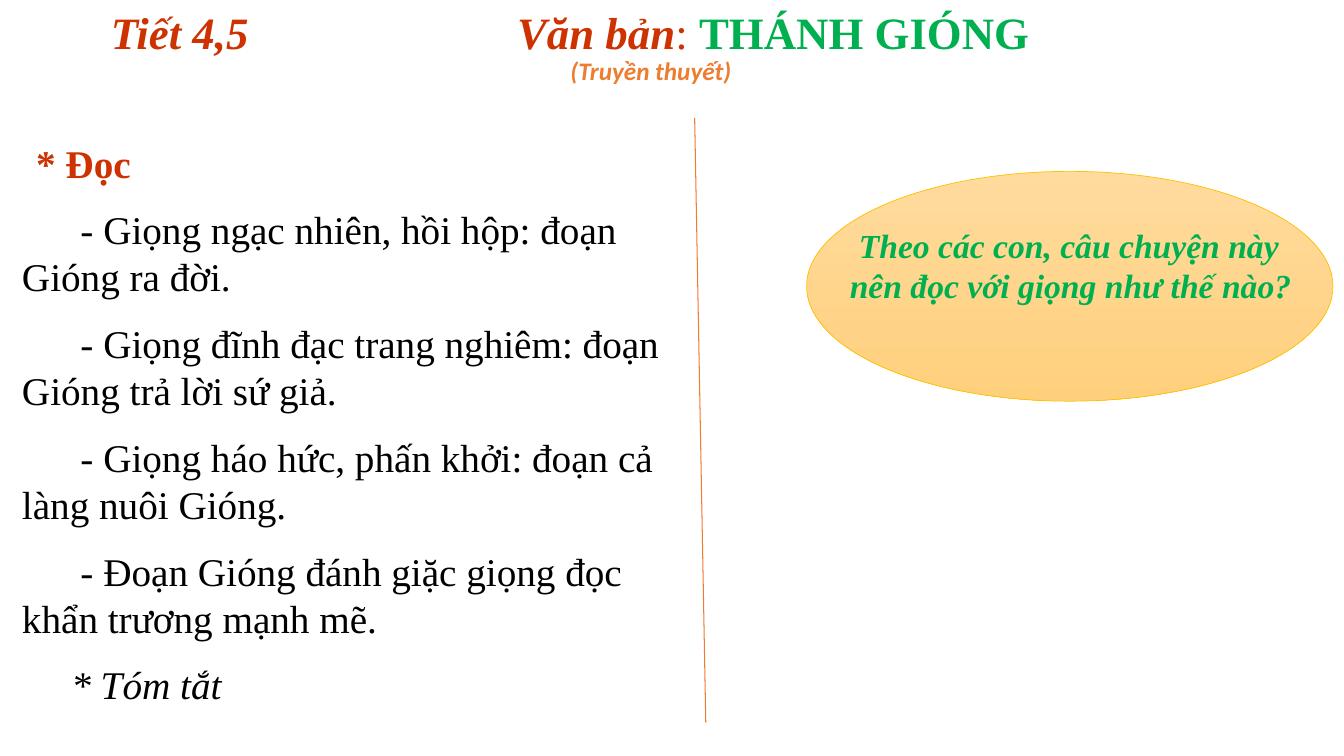
from pptx import Presentation
from pptx.dml.color import RGBColor
from pptx.enum.shapes import MSO_CONNECTOR, MSO_SHAPE
from pptx.oxml.ns import qn
from pptx.util import Inches, Pt
from lxml.etree import SubElement

THEME = {
    "serif": "Times New Roman", "sans": "Calibri",
    "red": "CC3300", "green": "00B050", "orange": "ED7D31",
    "black": "000000", "gold": "FFC000",
    "ellipse": ("FFDB9E", "FFD07C"),
    "title": 32, "body": 28, "question": 24, "subtitle": 18,
}

# Run: (text, colour, bold, italic). Paragraph: (first-line indent, runs).
TITLE = [(0, [("Tiết 4,5\tVăn bản", "red", True, True),
              (": ", "red", False, False),
              ("THÁNH GIÓNG", "green", True, False)])]
TITLE_TAB = 4.03
SUBTITLE = [(0, [("(Truyền thuyết)", "orange", True, True)])]
READING_TIPS = [
    "- Giọng ngạc nhiên, hồi hộp: đoạn Gióng ra đời.",
    "- Giọng đĩnh đạc trang nghiêm: đoạn Gióng trả lời sứ giả.",
    "- Giọng háo hức, phấn khởi: đoạn cả làng nuôi Gióng.",
    "- Đoạn Gióng đánh giặc giọng đọc khẩn trương mạnh mẽ.",
]
READING = [
    (0.14, [("* Đọc", "red", True, False)]),
    *((0.58, [(tip, "black", False, False)]) for tip in READING_TIPS),
    (0.49, [("* Tóm tắt", "black", False, True)]),
]
QUESTION = [(0.09, [("Theo các con, câu chuyện này nên đọc với giọng như thế nào?",
                     "green", True, True)])]


def color(name):
    return RGBColor.from_string(THEME[name])


def add_text(s, box, paragraphs, size, font="serif", wrap=True):
    tf = s.shapes.add_textbox(*map(Inches, box)).text_frame
    tf.word_wrap = wrap
    for i, (indent, runs) in enumerate(paragraphs):
        p = tf.paragraphs[0] if i == 0 else tf.add_paragraph()
        p.font.name, p.font.size = THEME[font], Pt(THEME[size])
        if i:
            p.space_before = Pt(THEME[size] / 2)
        if indent:
            p._p.get_or_add_pPr().set("indent", str(Inches(indent)))
        for text, ink, bold, italic in runs:
            r = p.add_run()
            r.text = text
            r.font.bold, r.font.italic = bold, italic
            r.font.color.rgb = color(ink)
    return tf


def add_tab_stop(p, position):
    pPr = p._p.get_or_add_pPr()
    tabs = pPr.makeelement(qn("a:tabLst"), {})
    SubElement(tabs, qn("a:tab"), pos=str(Inches(position)), algn="l")
    pPr.find(qn("a:defRPr")).addprevious(tabs)


def add_divider(s, start, end):
    line = s.shapes.add_connector(MSO_CONNECTOR.STRAIGHT, *map(Inches, start + end))
    line.line.color.rgb = color("orange")
    line.line.width = Pt(0.75)
    SubElement(line._element.spPr, qn("a:effectLst"))


def add_ellipse(s, box):
    sp = s.shapes.add_shape(MSO_SHAPE.OVAL, *map(Inches, box))
    sp.shadow.inherit = False
    sp.fill.gradient()
    sp.fill.gradient_angle = 270
    for stop, shade in zip(sp.fill.gradient_stops, THEME["ellipse"]):
        stop.color.rgb = RGBColor.from_string(shade)
    sp.line.color.rgb = color("gold")
    sp.line.width = Pt(0.5)


def main():
    prs = Presentation()
    prs.slide_width, prs.slide_height = Inches(13.33), Inches(7.5)
    s = prs.slides.add_slide(prs.slide_layouts[6])
    title = add_text(s, (1, 0, 10.29, 1.45), TITLE, "title")
    add_tab_stop(title.paragraphs[0], TITLE_TAB)
    add_text(s, (5.56, 0.5, 1.82, 0.4), SUBTITLE, "subtitle", "sans", wrap=False)
    add_divider(s, (6.89, 1.17), (7, 7.17))
    add_text(s, (0.12, 1.33, 6.67, 5.99), READING, "body")
    add_ellipse(s, (8, 1.7, 5.22, 2.28))
    add_text(s, (8.33, 2.18, 4.89, 0.91), QUESTION, "question")
    prs.save("out.pptx")


if __name__ == "__main__":
    main()
